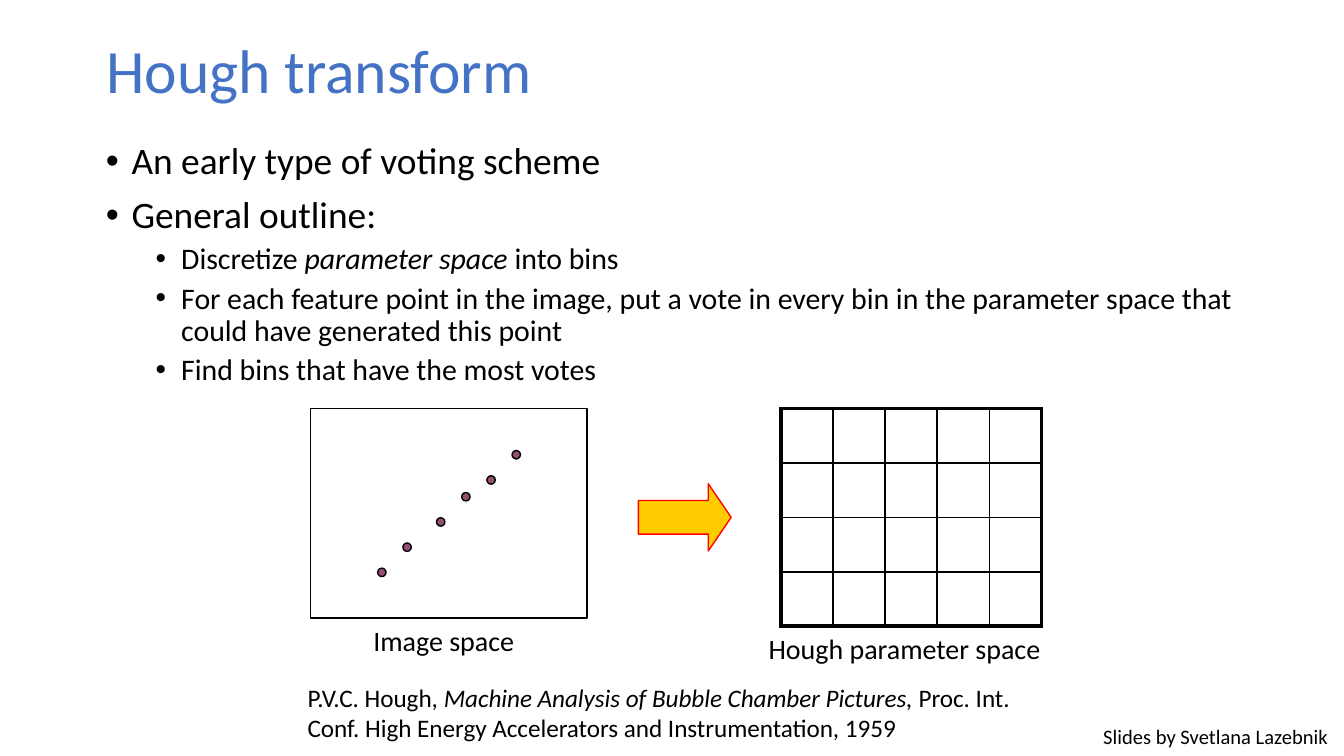
import pptx
import pptx.dml.color
import pptx.enum.shapes
import pptx.enum.text
import pptx.oxml
import pptx.oxml.ns
import pptx.util
from pptx.util import Inches

BLACK = "000000"
FONT = "Calibri"
ANCHOR = pptx.enum.text.MSO_ANCHOR
SHAPE = pptx.enum.shapes.MSO_SHAPE
FIT = pptx.enum.text.MSO_AUTO_SIZE
STEP = 1 / 16
POINTS = [(8, 19), (11, 16), (15, 13), (18, 10), (21, 8), (24, 5)]
OUTLINE = [
    (0, [("An early type of voting scheme", False)]),
    (0, [("General outline:", False)]),
    (1, [("Discretize ", False), ("parameter space ", True), ("into bins", False)]),
    (1, [("For each feature point in the image, put a vote in every bin in the "
          "parameter space that could have generated this point", False)]),
    (1, [("Find bins that have the most votes", False)]),
]
CITATION = [
    ("P.V.C. Hough, ", False),
    ("Machine Analysis of Bubble Chamber Pictures,", True),
    (" Proc. Int. Conf. High Energy Accelerators and Instrumentation, 1959", False),
]


def rgb(color):
    """Turn a hex string into a colour."""
    return pptx.dml.color.RGBColor.from_string(color)


def place(item, box):
    """Move an item to a left, top, width, height box in inches."""
    item.left, item.top, item.width, item.height = map(Inches, box)


def write(para, spans, size, color=BLACK):
    """Fill a paragraph with (text, italic) spans."""
    for text, italic in spans:
        span = para.add_run()
        span.text = text
        span.font.name = FONT
        span.font.size = pptx.util.Pt(size)
        span.font.italic = italic
        span.font.color.rgb = rgb(color)


def add_text(page, box, spans, size, wrap=False, anchor=ANCHOR.TOP):
    """Add a text box holding one paragraph."""
    frame = page.shapes.add_textbox(*map(Inches, box)).text_frame
    frame.word_wrap = wrap
    frame.auto_size = FIT.SHAPE_TO_FIT_TEXT
    frame.vertical_anchor = anchor
    write(frame.paragraphs[0], spans, size)


def add_shape(page, kind, box, fill=None, line=BLACK):
    """Add an outlined preset shape, filled if a colour is given."""
    shape = page.shapes.add_shape(kind, *map(Inches, box))
    shape.shadow.inherit = False
    if fill:
        shape.fill.solid()
        shape.fill.fore_color.rgb = rgb(fill)
    else:
        shape.fill.background()
    shape.line.color.rgb = rgb(line)
    shape.line.width = pptx.util.Pt(0.75)
    return shape


def set_title(page, box, text):
    """Format the title placeholder."""
    title = page.shapes.title
    place(title, box)
    frame = title.text_frame
    frame.auto_size = FIT.NONE
    frame.vertical_anchor = ANCHOR.MIDDLE
    para = frame.paragraphs[0]
    para.alignment = pptx.enum.text.PP_ALIGN.LEFT
    para.line_spacing = 0.9
    write(para, [(text, False)], 33, "4472C4")


def add_outline(page, box):
    """Add the two-level bulleted outline."""
    frame = page.shapes.add_textbox(*map(Inches, box)).text_frame
    frame.word_wrap = True
    for index, (level, spans) in enumerate(OUTLINE):
        para = frame.add_paragraph() if index else frame.paragraphs[0]
        para.level = level
        para.line_spacing = 0.9
        para.space_before = pptx.util.Pt((7.5, 3.8)[level])
        write(para, spans, (20, 16)[level])
        properties = para._p.get_or_add_pPr()
        properties.set("marL", str(Inches((0.19, 0.56)[level])))
        properties.set("indent", str(Inches(-0.19)))
        namespace = pptx.oxml.ns.nsdecls("a")
        for tag in ('buFont typeface="Arial"', 'buChar char="•"'):
            properties.append(pptx.oxml.parse_xml(f"<a:{tag} {namespace}/>"))


def add_image_space(page, box):
    """Add the framed feature points and their caption."""
    left, top, width, height = box
    add_shape(page, SHAPE.RECTANGLE, box)
    for column, row in POINTS:
        spot = (left + column * STEP, top + row * STEP, STEP, STEP)
        add_shape(page, SHAPE.OVAL, spot, fill="954F72")
    caption = (left + 0.37, top + height - 0.01, 1.26, 0.35)
    add_text(page, caption, [("Image space", False)], 15)


def add_arrow(page, box):
    """Add the block arrow between the two spaces."""
    arrow = add_shape(page, SHAPE.RIGHT_ARROW, box, fill="FFCC00", line="FF0000")
    arrow.adjustments[0] = 0.5
    arrow.adjustments[1] = 0.34


def set_border(cell, side, width):
    """Draw one black border of a cell."""
    namespace = pptx.oxml.ns.nsdecls("a")
    cell._tc.get_or_add_tcPr().append(pptx.oxml.parse_xml(
        f'<a:ln{side} {namespace} w="{pptx.util.Pt(width)}"><a:solidFill>'
        f'<a:srgbClr val="{BLACK}"/></a:solidFill></a:ln{side}>'))


def add_parameter_space(page, box, rows=4, columns=5):
    """Add the grid of bins with a heavy outer border and its caption."""
    left, top, width, height = box
    grid = page.shapes.add_table(rows, columns, *map(Inches, box)).table
    grid.first_row = grid.horz_banding = False
    for row in range(rows):
        for column in range(columns):
            cell = grid.cell(row, column)
            cell.margin_top = cell.margin_bottom = 0
            edges = {"L": column == 0, "R": column == columns - 1,
                     "T": row == 0, "B": row == rows - 1}
            for side, outer in edges.items():
                set_border(cell, side, 2.25 if outer else 1)
            cell.fill.background()
    caption = (left - 0.19, top + height - 0.01, 2.25, 0.35)
    add_text(page, caption, [("Hough parameter space", False)], 15)


def main():
    """Build and save the slide."""
    deck = pptx.Presentation()
    deck.slide_width = Inches(10)
    deck.slide_height = deck.slide_width * 9 // 16
    page = deck.slides.add_slide(deck.slide_layouts.get_by_name("Title Only"))
    set_title(page, (0.69, 0, 8.62, 1.09), "Hough transform")
    add_outline(page, (0.69, 1.01, 8.62, 3.57))
    add_text(page, (2.19, 5.02, 5.85, 0.56), CITATION, 13.5,
             wrap=True, anchor=ANCHOR.MIDDLE)
    add_image_space(page, (2.31, 3.04, 2.06, 1.56))
    add_arrow(page, (4.75, 3.6, 0.69, 0.5))
    add_parameter_space(page, (5.81, 3.04, 1.94, 1.62))
    add_text(page, (8.11, 5.34, 1.89, 0.29),
             [("Slides by Svetlana Lazebnik", False)], 11)
    deck.save("out.pptx")


if __name__ == "__main__":
    main()
